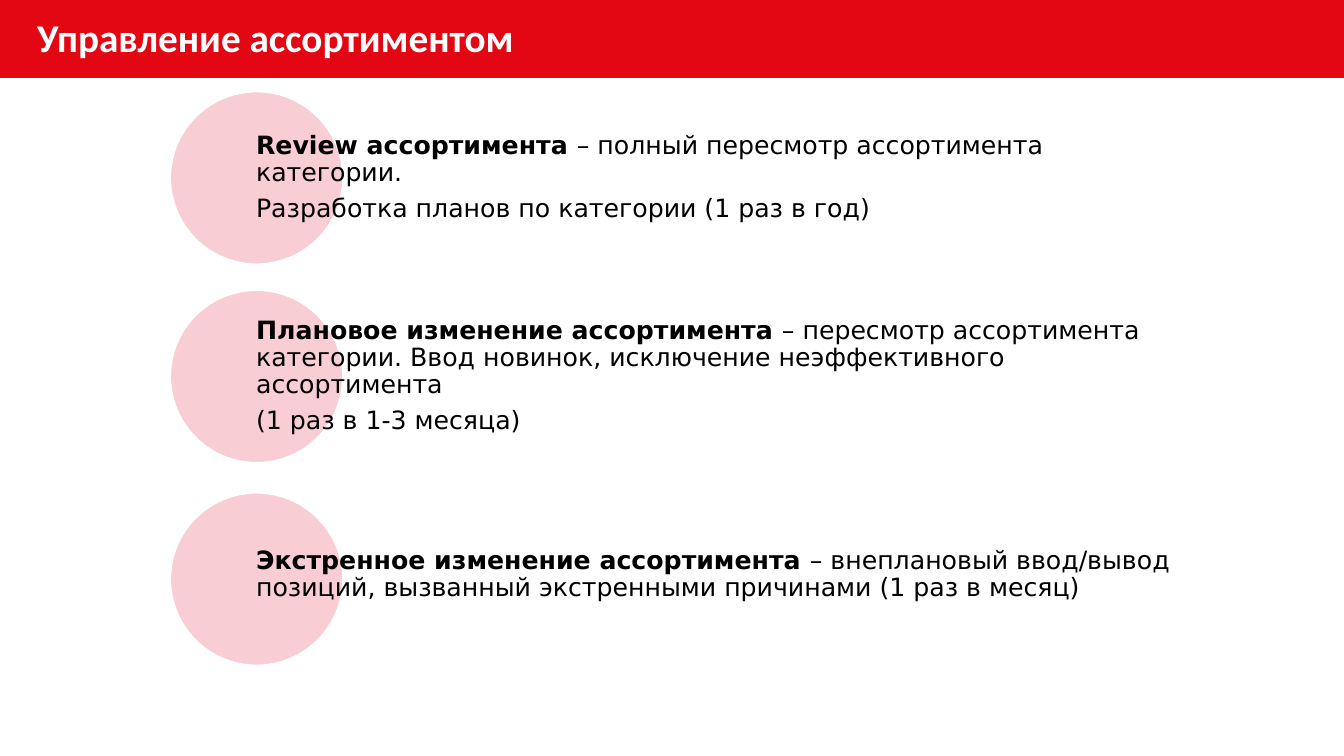
from lxml.etree import SubElement
from pptx import Presentation
from pptx.dml.color import RGBColor
from pptx.enum.shapes import MSO_SHAPE
from pptx.enum.text import MSO_ANCHOR
from pptx.oxml.ns import qn
from pptx.util import Inches, Pt

RED, PINK, WHITE, BLACK = "E30613", "F39DAA", "FFFFFF", "000000"
CIRCLE_SIZE = 1.71

TOPICS = [
    (0.91, 0.91, "Review ассортимента ",
     "– полный пересмотр ассортимента категории.",
     "Разработка планов по категории (1 раз в год)"),
    (2.88, 2.88, "Плановое изменение ассортимента ",
     "– пересмотр ассортимента категории. Ввод новинок, "
     "исключение неэффективного ассортимента",
     "(1 раз в 1-3 месяца)"),
    (4.89, 4.85, "Экстренное изменение ассортимента ",
     "– внеплановый ввод/вывод позиций, вызванный экстренными "
     "причинами (1 раз в месяц)",
     None),
]


def paint(color_format, color):
    color_format.rgb = RGBColor.from_string(color)


def add_shape(slide, kind, left, top, width, height, fill, line, line_width):
    shape = slide.shapes.add_shape(
        kind, Inches(left), Inches(top), Inches(width), Inches(height))
    shape.shadow.inherit = False
    shape.fill.solid()
    paint(shape.fill.fore_color, fill)
    paint(shape.line.color, line)
    shape.line.width = Pt(line_width)
    return shape


def add_circle(slide, top):
    circle = add_shape(slide, MSO_SHAPE.OVAL, 1.69, top,
                       CIRCLE_SIZE, CIRCLE_SIZE, PINK, WHITE, 1)
    fill_color = circle.fill._xPr.find(qn("a:solidFill"))[0]
    SubElement(fill_color, qn("a:alpha"), val="50000")


def add_span(para, text, font_name, size, color, bold):
    span = para.add_run()
    span.text = text
    span.font.name = font_name
    span.font.size = Pt(size)
    span.font.bold = bold
    paint(span.font.color, color)


def add_header(slide, text):
    add_shape(slide, MSO_SHAPE.RECTANGLE, 0, 0, 13.33, 0.77, RED, RED, 0.5)
    box = slide.shapes.add_textbox(
        Inches(0.27), Inches(0.08), Inches(4.98), Inches(0.57))
    box.text_frame.word_wrap = False
    add_span(box.text_frame.paragraphs[0], text, "Calibri", 28, WHITE, True)


def add_description(slide, top, term, meaning, detail):
    box = slide.shapes.add_textbox(
        Inches(2.54), Inches(top), Inches(9.1), Inches(CIRCLE_SIZE))
    frame = box.text_frame
    frame.word_wrap = True
    frame.vertical_anchor = MSO_ANCHOR.MIDDLE
    frame.margin_left = frame.margin_right = 0
    frame.margin_top = frame.margin_bottom = Inches(0.03)
    lines = [[(term, True), (meaning, False)]]
    if detail:
        lines.append([(detail, False)])
    for index, spans in enumerate(lines):
        para = frame.add_paragraph() if index else frame.paragraphs[0]
        para.line_spacing = 0.9
        para.space_after = Pt(6.3)
        for text, bold in spans:
            add_span(para, text, "DejaVu Sans", 18, BLACK, bold)


def main():
    deck = Presentation()
    deck.slide_width = Inches(13.33)
    deck.slide_height = Inches(7.5)
    slide = deck.slides.add_slide(deck.slide_layouts[6])
    add_header(slide, "Управление ассортиментом")
    for circle_top, text_top, term, meaning, detail in TOPICS:
        add_circle(slide, circle_top)
        add_description(slide, text_top, term, meaning, detail)
    deck.save("out.pptx")


if __name__ == "__main__":
    main()
